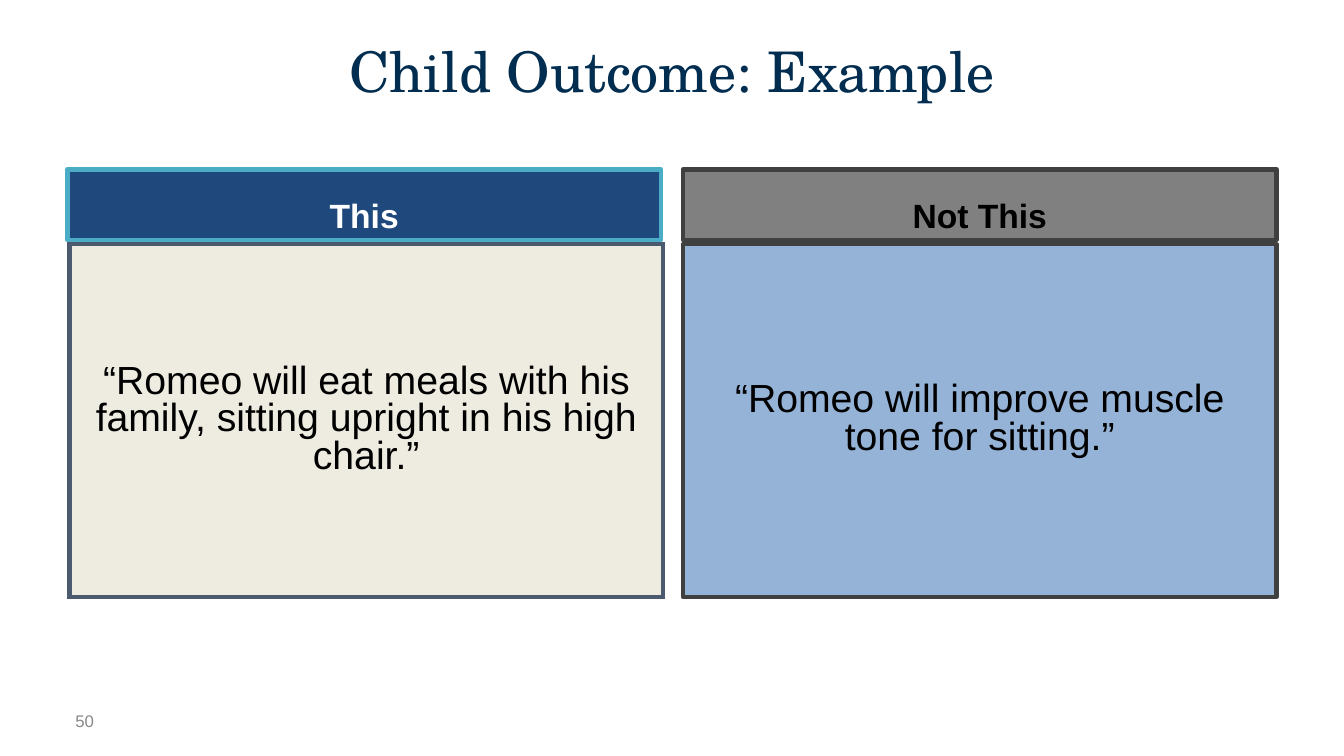
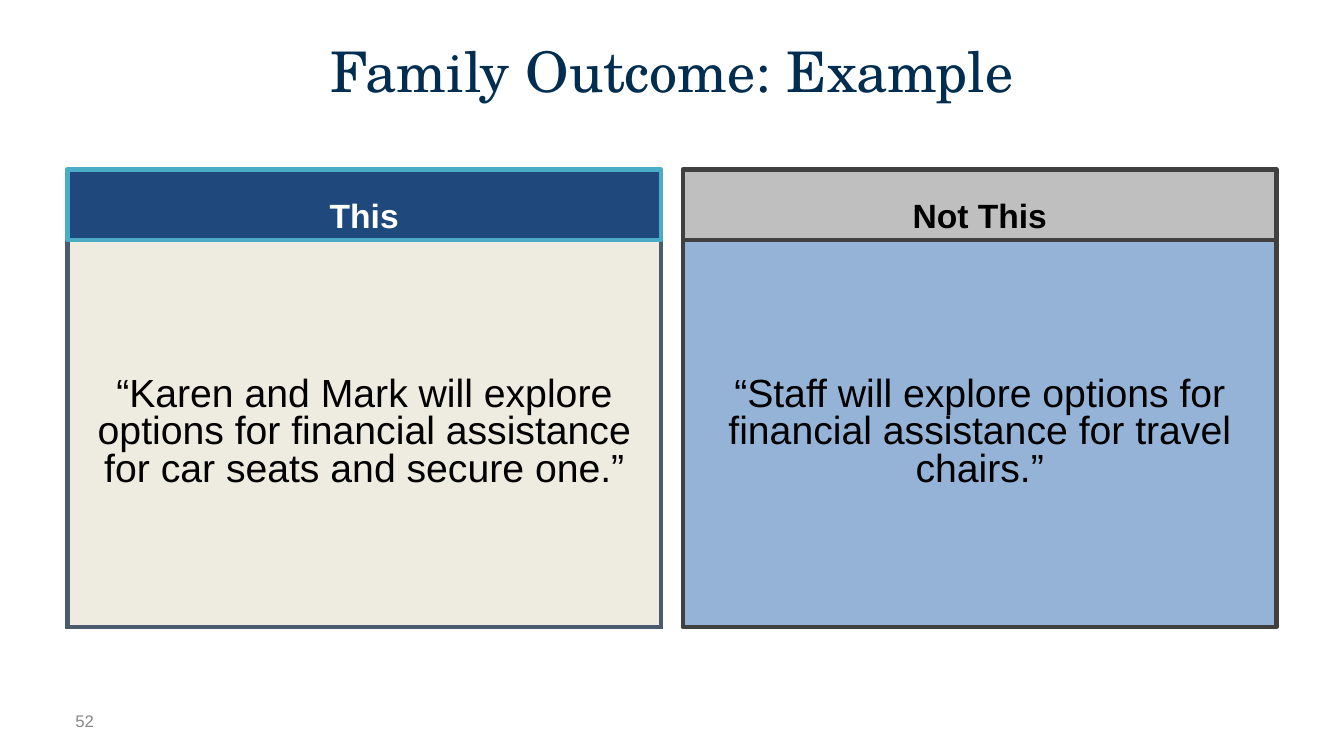
from pptx import Presentation
from pptx.util import Cm, Pt
from pptx.dml.color import RGBColor as Rgb
from pptx.enum.shapes import MSO_SHAPE as Geo
from pptx.enum.text import MSO_ANCHOR as Anc, PP_ALIGN as Al
from pptx.oxml.ns import qn
from lxml.etree import SubElement as Sub

INK = {
    "navy": "002D50", "blue": "1F497D", "teal": "4BACC6", "cream": "EEECE1",
    "slate": "4B5A6F", "sky": "95B3D7", "dark": "404040", "gray": "808080",
    "silver": "BFBFBF", "mute": "898989", "black": "000000", "white": "FFFFFF",
}

SLIDES = [
    {"title": "Child Outcome: Example", "num": "50", "top": 6.15, "high": 8.89,
     "nudge": 0.05, "not": "gray",
     "this": "“Romeo will eat meals with his family, sitting upright in his high chair.”",
     "that": "“Romeo will improve muscle tone for sitting.”"},
    {"title": "Family Outcome: Example", "num": "52", "top": 6.05, "high": 9.75,
     "nudge": 0, "not": "silver",
     "this": "“Karen and Mark will explore options for financial assistance for car seats and secure one.”",
     "that": "“Staff will explore options for financial assistance for travel chairs.”"},
]

WIDE, TALL = 33.87, 19.05
EDGE, GAP = 1.7, 0.55
COL = (WIDE - 2 * EDGE - GAP) / 2
LEFT, RIGHT = EDGE, EDGE + COL + GAP
HEAD_TOP, HEAD_HIGH = 4.27, 1.78

STYLE = {
    "title": {"font": {"name": "TeX Gyre Schola", "size": Pt(40)},
              "para": {"alignment": Al.CENTER}, "anchor": Anc.MIDDLE},
    "num": {"font": {"name": "Arial", "size": Pt(12)},
            "para": {"alignment": Al.LEFT}, "anchor": Anc.MIDDLE},
    "head": {"font": {"name": "Arial", "size": Pt(24), "bold": True},
             "para": {"alignment": Al.CENTER, "space_before": Pt(4.8)},
             "anchor": Anc.BOTTOM},
    "body": {"font": {"name": "Arial", "size": Pt(28)},
             "para": {"alignment": Al.CENTER, "space_before": Pt(5.6),
                      "line_spacing": 0.8},
             "anchor": Anc.MIDDLE},
}


def tint(name):
    return Rgb.from_string(INK[name])


def apply(obj, vals):
    for key, val in vals.items():
        setattr(obj, key, val)


def write(shape, text, kind, ink):
    style = STYLE[kind]
    frame = shape.text_frame
    apply(frame, {"word_wrap": True, "vertical_anchor": style["anchor"]})
    para = frame.paragraphs[0]
    apply(para, style["para"])
    run = para.add_run()
    run.text = text
    apply(run.font, style["font"])
    run.font.color.rgb = tint(ink)


def label(slide, at, text, kind, ink):
    write(slide.shapes.add_textbox(*map(Cm, at)), text, kind, ink)


def panel(slide, at, text, kind, fill, edge, ink="black", join="round"):
    box = slide.shapes.add_shape(Geo.RECTANGLE, *map(Cm, at))
    box.shadow.inherit = False
    box.fill.solid()
    box.fill.fore_color.rgb = tint(fill)
    box.line.color.rgb = tint(edge)
    box.line.width = Pt(3)
    Sub(box.line._get_or_add_ln(), qn("a:" + join))
    write(box, text, kind, ink)


def build(deck, item):
    slide = deck.slides.add_slide(deck.slide_layouts[6])
    top, high, nudge = item["top"], item["high"], item["nudge"]
    label(slide, (1.65, 17.65, 1.45, 1.02), item["num"], "num", "mute")
    panel(slide, (RIGHT, top, COL, high), item["that"], "body", "sky", "dark")
    panel(slide, (RIGHT, HEAD_TOP, COL, HEAD_HIGH), "Not This", "head",
          item["not"], "dark")
    panel(slide, (LEFT + nudge, top, COL, high), item["this"], "body",
          "cream", "slate", join="miter")
    panel(slide, (LEFT, HEAD_TOP, COL, HEAD_HIGH), "This", "head",
          "blue", "teal", "white")
    label(slide, (EDGE, 0.76, WIDE - 2 * EDGE, 2), item["title"], "title", "navy")


def main():
    deck = Presentation()
    apply(deck, {"slide_width": Cm(WIDE), "slide_height": Cm(TALL)})
    for item in SLIDES:
        build(deck, item)
    deck.save("out.pptx")


if __name__ == "__main__":
    main()
